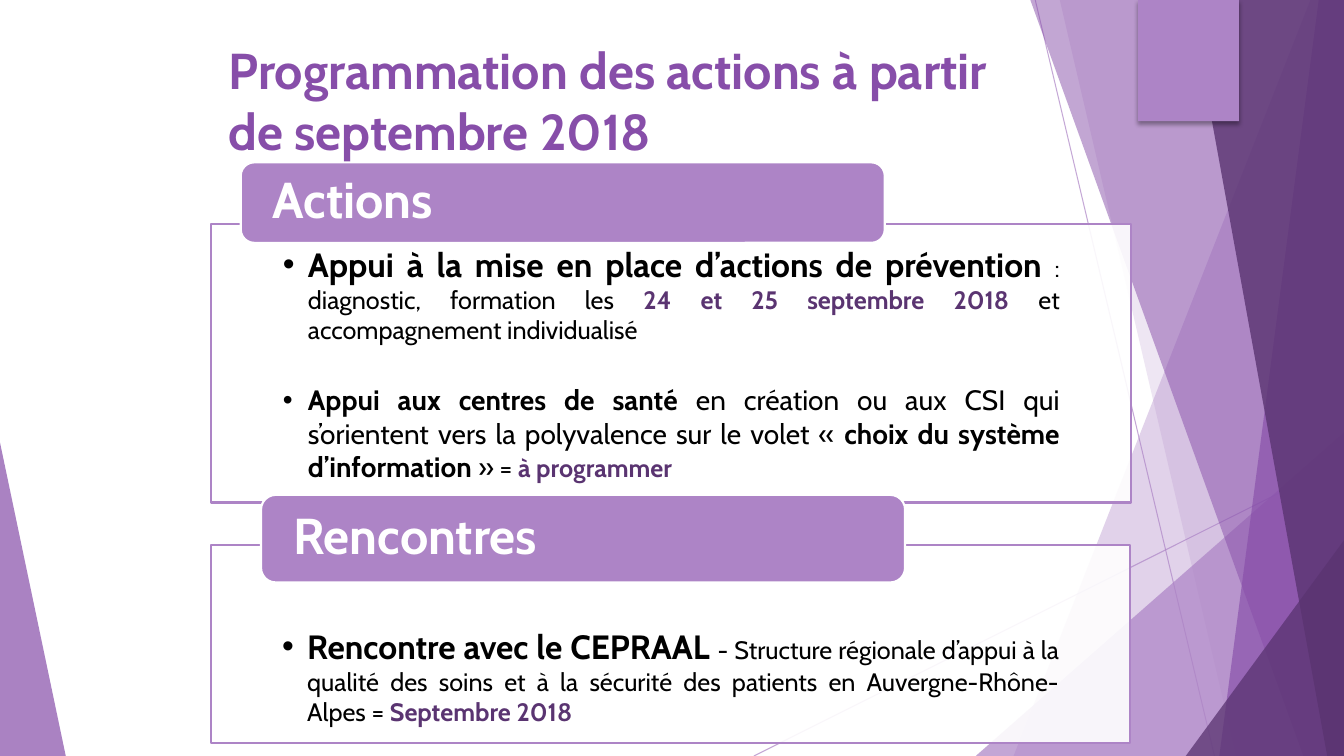
from lxml import etree
from pptx import Presentation
from pptx.dml.color import RGBColor
from pptx.enum import shapes, text
from pptx.oxml import ns
from pptx.util import Pt

LILAC = RGBColor(0xAD, 0x84, 0xC6)
PURPLE = RGBColor(0x87, 0x4E, 0xA9)
PLUM = RGBColor(0x5A, 0x34, 0x71)
WHITE = RGBColor(0xFF, 0xFF, 0xFF)
BLACK = RGBColor(0, 0, 0)
WIDE, HIGH = 960, 540

HEAD = {"size": Pt(36), "bold": True}
LEAD = {"size": Pt(24), "bold": True}
MID = {"size": Pt(20), "bold": False}
STRONG = {"size": Pt(20), "bold": True}
BODY = {"size": Pt(18), "bold": False}
DATE = {"size": Pt(18), "bold": True}

BACK = [
    ([(936, 0), (724, 540), (960, 540), (960, 0)], LILAC, 36),
    ([(757, 0), (883, 540), (960, 540), (960, 0)], LILAC, 20),
    ([(697, 540), (960, 309), (960, 540)], LILAC, 72),
    ([(736, 0), (931, 540), (960, 540), (960, 0)], PURPLE, 50),
    ([(942, 0), (871, 540), (960, 540), (960, 0)], PURPLE, 66),
    ([(850, 0), (948, 540), (960, 540), (960, 0)], PLUM, 80),
    ([(847, 540), (960, 386), (960, 540)], PLUM, 76),
    ([(0, 316), (47, 540), (0, 540)], PURPLE, 70),
]

# Each panel: frame, top inset, tab frame, tab name, items of (words, format, colour)
PANELS = [
    ((151, 160, 657, 199), 14.4, (172, 116, 460, 57.5), "Actions", [
        [("Appui à la mise en place d’actions de prévention ", LEAD, BLACK),
         (": diagnostic, formation les ", BODY, BLACK),
         ("24 et 25 septembre 2018 ", DATE, PLUM),
         ("et accompagnement individualisé", BODY, BLACK)],
        [("Appui aux centres de santé ", STRONG, BLACK),
         ("en création ou aux CSI qui s’orientent vers la polyvalence "
          "sur le volet « ", MID, BLACK),
         ("choix du système d’information", STRONG, BLACK),
         (" »", MID, BLACK),
         (" = ", BODY, BLACK),
         ("à programmer", DATE, PLUM)],
    ]),
    ((150.5, 389.5, 657, 141), 57.6, (186.5, 353.5, 460, 62.5), "Rencontres", [
        [("Rencontre avec le CEPRAAL ", LEAD, BLACK),
         ("- Structure régionale d’appui à la qualité des soins et à la "
          "sécurité des patients en Auvergne-Rhône-Alpes = ", BODY, BLACK),
         ("Septembre 2018", DATE, PLUM)],
    ]),
]


def add(node, tag, **attrs):
    return etree.SubElement(node, ns.qn(tag), attrs)


def fade(fill, share):
    """Set the opacity, in percent, of a solid fill's colour node."""
    add(fill.find(".//" + ns.qn("a:srgbClr")), "a:alpha", val=str(share * 1000))


class Sheet:
    font = "Cabin"

    def __init__(self, slide):
        self.slide = slide
        self.items = slide.shapes

    def paint(self, shape, fill, share=100, edge=None):
        shape.shadow.inherit = False
        shape.fill.solid()
        shape.fill.fore_color.rgb = fill
        if share < 100:
            fade(shape._element.spPr, share)
        if edge is None:
            shape.line.fill.background()
        else:
            shape.line.color.rgb = edge
            shape.line.width = Pt(1.5)
        return shape

    def line(self, *ends):
        link = self.items.add_connector(
            shapes.MSO_CONNECTOR.STRAIGHT, *map(Pt, ends))
        link.line.color.rgb = LILAC
        link.line.width = Pt(0.75)
        fade(link._element.spPr, 70)
        add(link._element.spPr, "a:effectLst")

    def shard(self, points, fill, share):
        pen = self.items.build_freeform(*points[0], scale=Pt(1))
        pen.add_line_segments(points[1:], close=True)
        self.paint(pen.convert_to_shape(), fill, share)

    def block(self, kind, frame, *look):
        return self.paint(self.items.add_shape(kind, *map(Pt, frame)), *look)

    def cast(self, shape):
        """Give the shape a soft shadow below it."""
        soft = add(shape._element.spPr.find(ns.qn("a:effectLst")), "a:outerShdw",
                   blurRad=str(Pt(3)), dist=str(Pt(2)), dir="5400000")
        add(add(soft, "a:srgbClr", val="000000"), "a:alpha", val="35000")

    def frame(self, shape, anchor, left, top, right, low):
        box = shape.text_frame
        looks = {"word_wrap": True, "vertical_anchor": anchor,
                 "margin_left": Pt(left), "margin_top": Pt(top),
                 "margin_right": Pt(right), "margin_bottom": Pt(low)}
        for name, value in looks.items():
            setattr(box, name, value)
        return box

    def say(self, para, words, look, color):
        run = para.add_run()
        run.text = words
        run.font.name = self.font
        run.font.color.rgb = color
        for name, value in look.items():
            setattr(run.font, name, value)

    def title(self, words, frame):
        head = self.items.title
        for name, value in zip(("left", "top", "width", "height"), frame):
            setattr(head, name, Pt(value))
        box = self.frame(head, text.MSO_ANCHOR.TOP, 7.2, 3.6, 7.2, 3.6)
        box.auto_size = text.MSO_AUTO_SIZE.NONE
        para = box.paragraphs[0]
        para.alignment = text.PP_ALIGN.LEFT
        self.say(para, words, HEAD, PURPLE)

    def list(self, shape, top, items):
        box = self.frame(shape, text.MSO_ANCHOR.TOP, 51, top, 51, 13.7)
        for rank, item in enumerate(items):
            para = box.add_paragraph() if rank else box.paragraphs[0]
            props = para._p.get_or_add_pPr()
            props.set("marL", str(Pt(18)))
            props.set("indent", str(Pt(-18)))
            add(props, "a:buFont", typeface="Arial")
            add(props, "a:buChar", char="•")
            para.alignment = text.PP_ALIGN.JUSTIFY
            if rank:
                para.space_before = Pt(27)
            for part in item:
                self.say(para, *part)

    def panel(self, frame, top, tab, name, items):
        kinds = shapes.MSO_SHAPE
        body = self.block(kinds.RECTANGLE, frame, WHITE, 90, LILAC)
        self.list(body, top, items)
        label = self.block(kinds.ROUNDED_RECTANGLE, tab, LILAC, 100, WHITE)
        box = self.frame(label, text.MSO_ANCHOR.MIDDLE, 20, 0, 20, 0)
        para = box.paragraphs[0]
        para.alignment = text.PP_ALIGN.LEFT
        para.line_spacing = 0.9
        self.say(para, name, HEAD, WHITE)


def main():
    deck = Presentation()
    deck.slide_width, deck.slide_height = Pt(WIDE), Pt(HIGH)
    sheet = Sheet(deck.slides.add_slide(deck.slide_layouts[5]))
    sheet.line(538.5, 540, 960, 329)
    sheet.line(739.5, 0, 867.5, 540)
    for shard in BACK:
        sheet.shard(*shard)
    sheet.cast(sheet.block(shapes.MSO_SHAPE.RECTANGLE, (813, 0, 72, 86.5), LILAC))
    sheet.title("Programmation des actions à partir de septembre 2018",
                (156, 24.5, 559, 103.5))
    for panel in PANELS:
        sheet.panel(*panel)
    deck.save("out.pptx")


if __name__ == "__main__":
    main()
